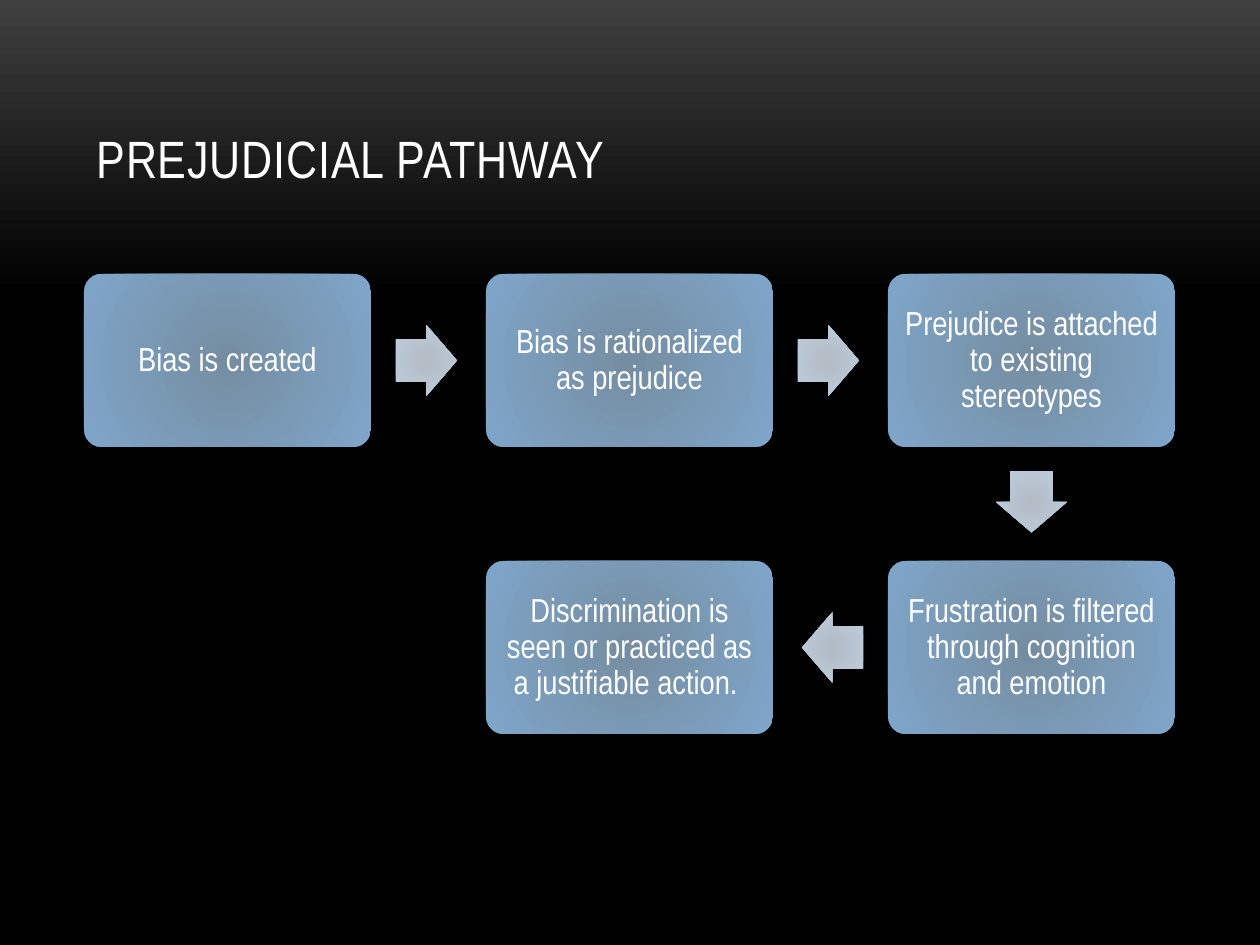
from dataclasses import dataclass

from lxml import etree
from pptx import Presentation
from pptx import util as u
from pptx.dml.color import RGBColor
from pptx.enum import shapes, text
from pptx.oxml import ns

PX = 914400 / 126
FONT = "Arial Narrow"
COLORS = {
    "text": "FFFFFF",
    "sky": "3F3F3F",
    "night": "000000",
    "step_core": "758DA1",
    "step_edge": "7FA6CA",
    "arrow_core": "B3BBC4",
    "arrow_edge": "BFCFE0",
}
LEFT, TOP = 84, 274
STEP_W, STEP_H = 287, 173
COLUMN_PITCH, ROW_PITCH = 402, 287
ARROW_W, ARROW_H = 61, 71
ARROW_SHIFT = 2  # arrows sit slightly nearer the step they leave
INSET = 10


@dataclass
class Step:
    label: str
    column: int
    row: int

    @property
    def left(self) -> int:
        return LEFT + self.column * COLUMN_PITCH

    @property
    def top(self) -> int:
        return TOP + self.row * ROW_PITCH


STEPS = [
    Step("Bias is created", 0, 0),
    Step("Bias is rationalized as prejudice", 1, 0),
    Step("Prejudice is attached to existing stereotypes", 2, 0),
    Step("Frustration is filtered through cognition and emotion", 2, 1),
    Step("Discrimination is seen or practiced as a justifiable action. ", 1, 1),
]
ROTATIONS = {(1, 0): 0, (0, 1): 90, (-1, 0): 180}


def px(length: float) -> u.Emu:
    return u.Emu(round(length * PX))


def set_gradient(properties, stops: list[tuple[int, str]], radial: bool) -> None:
    """Replace a solid fill by a radial or top-to-bottom gradient."""
    gradient = etree.Element(ns.qn("a:gradFill"), rotWithShape="1")
    stop_list = etree.SubElement(gradient, ns.qn("a:gsLst"))
    for percent, color in stops:
        stop = etree.SubElement(stop_list, ns.qn("a:gs"), pos=str(percent * 1000))
        etree.SubElement(stop, ns.qn("a:srgbClr"), val=COLORS[color])
    if radial:
        circle = etree.SubElement(gradient, ns.qn("a:path"), path="circle")
        etree.SubElement(circle, ns.qn("a:fillToRect"),
                         {side: "100000" for side in "ltrb"})
    else:
        etree.SubElement(gradient, ns.qn("a:lin"), ang="5400000", scaled="0")
    properties.replace(properties.find(ns.qn("a:solidFill")), gradient)


def format_run(run, size: int) -> None:
    run.font.name = FONT
    run.font.size = u.Pt(size)
    run.font.color.rgb = RGBColor.from_string(COLORS["text"])


def add_glowing_shape(slide, kind, left: float, top: float, width: int,
                      height: int, core: str, edge: str):
    shape = slide.shapes.add_shape(kind, px(left), px(top), px(width), px(height))
    shape.shadow.inherit = False
    shape.line.fill.background()
    shape.fill.solid()
    set_gradient(shape._element.spPr, [(0, core), (100, edge)], radial=True)
    return shape


def add_step(slide, step: Step) -> None:
    box = add_glowing_shape(slide, shapes.MSO_SHAPE.ROUNDED_RECTANGLE, step.left,
                            step.top, STEP_W, STEP_H, "step_core", "step_edge")
    box.adjustments[0] = 0.1
    frame = box.text_frame
    frame.text = step.label
    frame.word_wrap = True
    frame.vertical_anchor = text.MSO_ANCHOR.MIDDLE
    frame.margin_left = frame.margin_right = px(INSET)
    frame.margin_top = frame.margin_bottom = px(INSET)
    label = frame.paragraphs[0]
    label.alignment = text.PP_ALIGN.CENTER
    label.line_spacing = 0.9
    format_run(label.runs[0], 19)


def add_arrow(slide, source: Step, target: Step) -> None:
    across, down = target.column - source.column, target.row - source.row
    center_x = (source.left + target.left + STEP_W) / 2 - ARROW_SHIFT * across
    center_y = (source.top + target.top + STEP_H) / 2 - ARROW_SHIFT * down
    arrow = add_glowing_shape(slide, shapes.MSO_SHAPE.RIGHT_ARROW,
                              center_x - ARROW_W / 2, center_y - ARROW_H / 2,
                              ARROW_W, ARROW_H, "arrow_core", "arrow_edge")
    arrow.adjustments[0] = 0.6
    arrow.adjustments[1] = 0.5
    arrow.rotation = ROTATIONS[across, down]


def add_title(slide, heading: str) -> None:
    title = slide.shapes.title
    title.left, title.top, title.width, title.height = map(px, (84, 38, 1092, 157))
    frame = title.text_frame
    frame.text = heading
    frame.vertical_anchor = text.MSO_ANCHOR.BOTTOM
    frame.paragraphs[0].alignment = text.PP_ALIGN.LEFT
    run = frame.paragraphs[0].runs[0]
    format_run(run, 30)
    run.font._element.set("spc", "50")


def main() -> None:
    deck = Presentation()
    deck.slide_width, deck.slide_height = px(1260), px(945)
    slide = deck.slides.add_slide(deck.slide_layouts[5])

    # Background
    slide.background.fill.solid()
    set_gradient(slide._element.cSld.bg.bgPr,
                 [(0, "sky"), (31, "night"), (100, "night")], radial=False)

    # Title
    add_title(slide, "PREJUDICIAL PATHWAY")

    # Pathway
    for step in STEPS:
        add_step(slide, step)
    for source, target in zip(STEPS, STEPS[1:]):
        add_arrow(slide, source, target)

    deck.save("out.pptx")


if __name__ == "__main__":
    main()
